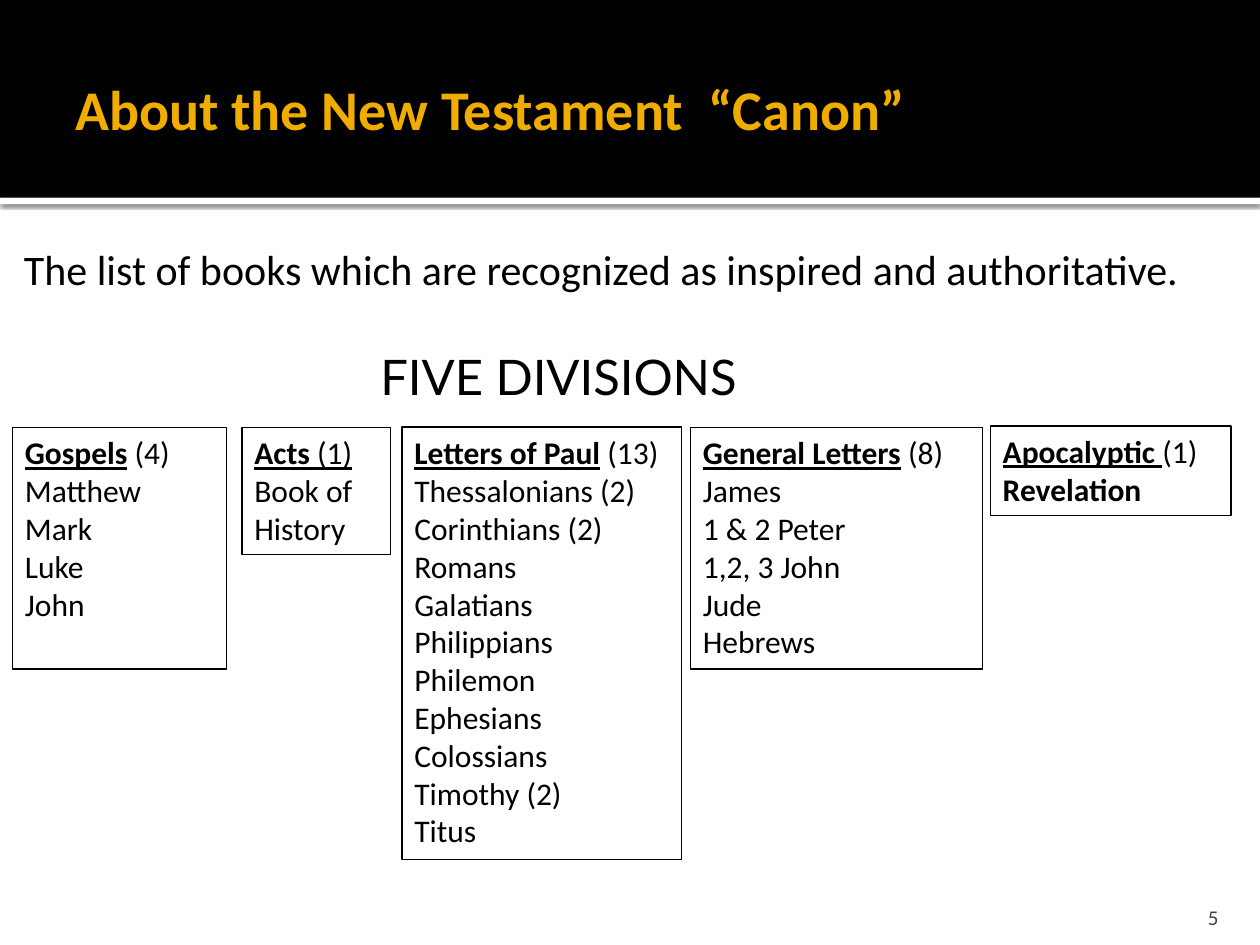
from pptx import Presentation
from pptx.dml.color import RGBColor
from pptx.enum.shapes import MSO_SHAPE as SHAPE
from pptx.enum.text import MSO_ANCHOR as ANCHOR, PP_ALIGN as ALIGN
from pptx.oxml import parse_xml
from pptx.oxml.ns import nsdecls
from pptx.util import Inches, Pt

BLACK, WHITE, GOLD, GRAY = "000000", "FFFFFF", "F0AD00", "454545"
HEADING = {"bold": True, "underline": True}
UNDERLINED = {"underline": True}
BOLD = {"bold": True}

# Left, top, width, height, then lines made of (text, format) runs
DIVISIONS = [
    (0.1, 3.39, 1.7, 1.92,
     [[("Gospels", HEADING), (" (4)", {})],
      "Matthew", "Mark", "Luke", "John"]),
    (1.92, 3.39, 1.18, 1.01,
     [[("Acts ", HEADING), ("(1)", UNDERLINED)], "Book of History"]),
    (3.19, 3.39, 2.22, 3.43,
     [[("Letters of Paul", HEADING), (" (13)", {})],
      "Thessalonians (2)", "Corinthians (2)", "Romans", "Galatians",
      "Philippians", "Philemon", "Ephesians", "Colossians",
      "Timothy (2)", "Titus"]),
    (5.48, 3.39, 2.32, 1.92,
     [[("General Letters", HEADING), (" (8)", {})],
      "James", "1 & 2 Peter", "1,2, 3 John", "Jude", "Hebrews"]),
    (7.86, 3.38, 1.91, 0.71,
     [[("Apocalyptic ", HEADING), ("(1)", {})], [("Revelation", BOLD)]]),
]


def color(value):
    return RGBColor.from_string(value)


def add_band(s, top, height, fill):
    sp = s.shapes.add_shape(SHAPE.RECTANGLE, 0, Inches(top),
                            Inches(10), Inches(height))
    sp.shadow.inherit = False
    sp.fill.solid()
    sp.fill.fore_color.rgb = color(fill)
    sp.line.fill.background()
    return sp


def add_drop_shadow(sp):
    sp.shadow.inherit = False
    effects = sp._element.spPr.find(
        "{http://schemas.openxmlformats.org/drawingml/2006/main}effectLst")
    effects.append(parse_xml(
        f'<a:outerShdw {nsdecls("a")} blurRad="{Pt(2.5)}" dist="{Pt(0.8)}" '
        'dir="5400000" algn="t" rotWithShape="0"><a:srgbClr val="000000">'
        '<a:alpha val="60000"/></a:srgbClr></a:outerShdw>'))


def add_text(s, left, top, width, height, lines, size, font="Calibri",
             fill=BLACK, align=ALIGN.LEFT, anchor=ANCHOR.TOP,
             insets=(0.1, 0.05, 0.1, 0.05)):
    sp = s.shapes.add_textbox(*map(Inches, (left, top, width, height)))
    tf = sp.text_frame
    tf.word_wrap = True
    tf.vertical_anchor = anchor
    for side, inset in zip(("left", "top", "right", "bottom"), insets):
        setattr(tf, f"margin_{side}", Inches(inset))
    for i, line in enumerate(lines):
        p = tf.add_paragraph() if i else tf.paragraphs[0]
        p.alignment = align
        for text, extra in [(line, {})] if isinstance(line, str) else line:
            r = p.add_run()
            r.text = text
            r.font.color.rgb = color(fill)
            for name, value in {"name": font, "size": Pt(size), **extra}.items():
                setattr(r.font, name, value)
    return sp


def add_division(s, left, top, width, height, lines):
    sp = add_text(s, left, top, width, height, lines, 18)
    sp.line.color.rgb = color(BLACK)
    sp.line.width = Pt(0.75)


def main():
    prs = Presentation()
    prs.slide_width, prs.slide_height = Inches(10), Inches(7.5)
    s = prs.slides.add_slide(prs.slide_layouts[6])

    # Header bands and title
    add_drop_shadow(add_band(s, 1.57, 0.05, WHITE))
    add_band(s, 0, 1.57, BLACK)
    add_text(s, 0.5, 0.17, 9, 1.37,
             [[("About the New Testament  “Canon”", BOLD)]], 32, fill=GOLD,
             anchor=ANCHOR.MIDDLE, insets=(0.1, 0.05, 0.05, 0.05))

    # Definition
    add_text(s, 0, 1.83, 10, 5.58,
             ["The list of books which are recognized as inspired and "
              "authoritative."], 24, insets=(0.19, 0.1, 0.1, 0.05))

    # The five divisions
    for division in DIVISIONS:
        add_division(s, *division)
    add_text(s, 2.92, 2.7, 3.09, 0.57, ["FIVE DIVISIONS"], 28, font="Lato")

    # Slide number
    add_text(s, 8.97, 7.08, 0.8, 0.3, ["5"], 12, fill=GRAY, align=ALIGN.RIGHT,
             anchor=ANCHOR.BOTTOM, insets=(0.1, 0.05, 0.1, 0))
    prs.save("out.pptx")


if __name__ == "__main__":
    main()
